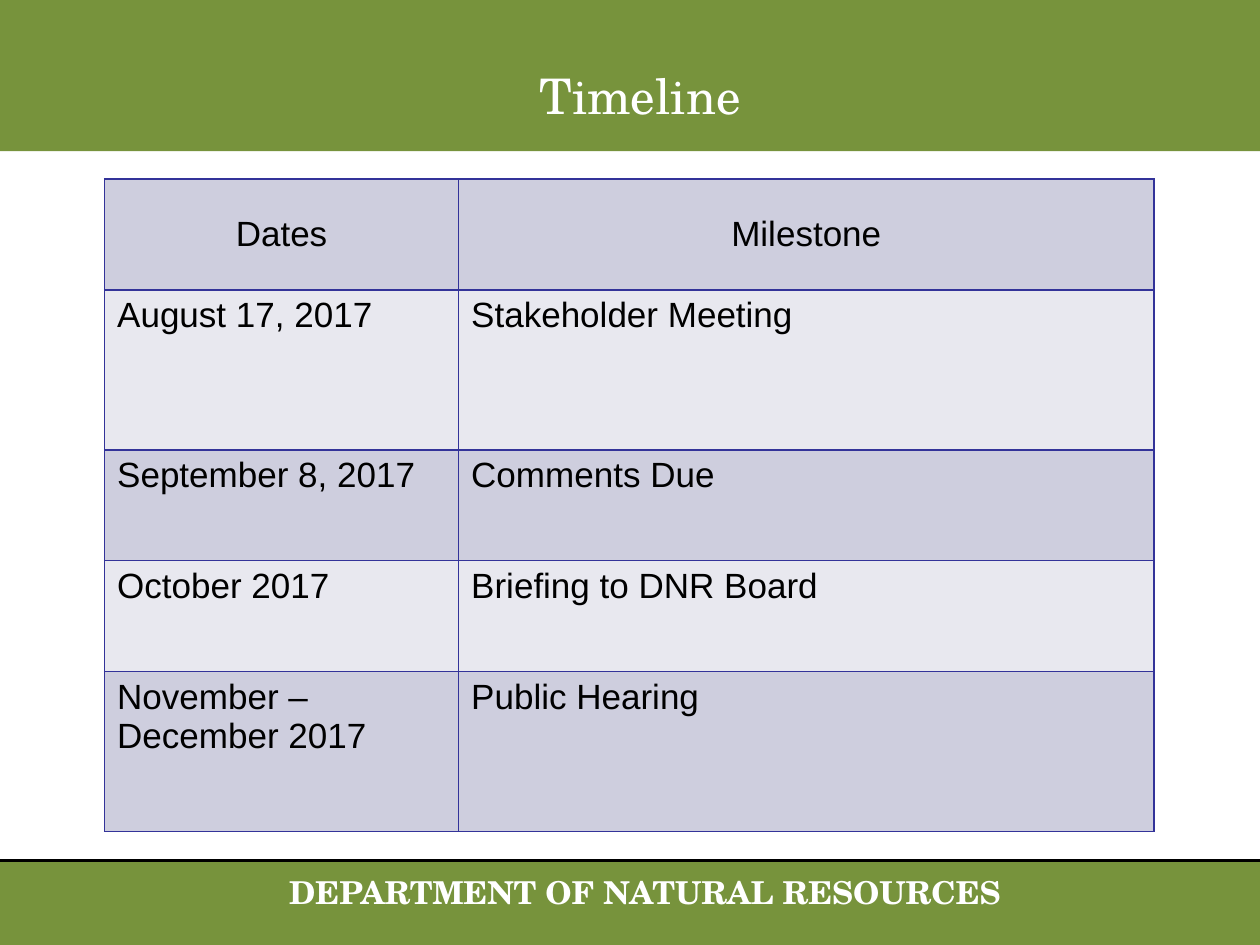
from dataclasses import dataclass

from lxml.etree import SubElement
from pptx import Presentation
from pptx.dml.color import RGBColor
from pptx.enum.shapes import MSO_CONNECTOR, MSO_SHAPE
from pptx.enum.text import MSO_ANCHOR as Anchor, PP_ALIGN as Align
from pptx.oxml.ns import qn
from pptx.slide import Slide
from pptx.table import _Cell as Cell
from pptx.util import Inches, Pt

GREEN, WHITE, BLACK = "77933C", "FFFFFF", "000000"
HEADING_FONT = "TeX Gyre Schola"
BORDER_COLOUR = "333399"
BAND_FILLS = ("CECEDE", "E8E8EF")
FOOTER_TOP = 6.83
COLUMN_WIDTHS = (2.81, 5.52)


@dataclass
class Band:
    top: float
    height: float


@dataclass
class Heading:
    text: str
    left: float
    top: float
    width: float
    height: float
    size: int
    bold: bool = False
    margin_top: float = 0.05
    line_spacing: float = 1.0


@dataclass
class Milestone:
    date: str
    event: str
    height: float = 0.88


BANDS = (Band(FOOTER_TOP, 0.67), Band(0, 1.2))
HEADINGS = (
    Heading("DEPARTMENT OF NATURAL RESOURCES", 1.58, 6.88, 7.08, 0.4, 18, bold=True),
    Heading("Timeline", 0.58, 0, 9, 1.17, 28, margin_top=0.45, line_spacing=0.9),
)
MILESTONES = (
    Milestone("Dates", "Milestone"),
    Milestone("August 17, 2017", "Stakeholder Meeting", 1.27),
    Milestone("September 8, 2017", "Comments Due"),
    Milestone("October 2017", "Briefing to DNR Board"),
    Milestone("November – December 2017", "Public Hearing", 1.27),
)


def colour(value: str) -> RGBColor:
    return RGBColor.from_string(value)


def draw_band(slide: Slide, band: Band) -> None:
    shape = slide.shapes.add_shape(
        MSO_SHAPE.RECTANGLE, 0, Inches(band.top), Inches(10), Inches(band.height)
    )
    shape.shadow.inherit = False
    shape.fill.solid()
    shape.fill.fore_color.rgb = colour(GREEN)
    shape.line.fill.background()


def draw_footer_rule(slide: Slide) -> None:
    rule = slide.shapes.add_connector(
        MSO_CONNECTOR.STRAIGHT, 0, Inches(FOOTER_TOP), Inches(10), Inches(FOOTER_TOP)
    )
    rule.line.color.rgb = colour(BLACK)
    rule.line.width = Pt(1.75)
    SubElement(rule._element.spPr, qn("a:effectLst"))


def draw_heading(slide: Slide, heading: Heading) -> None:
    box = slide.shapes.add_textbox(
        Inches(heading.left), Inches(heading.top),
        Inches(heading.width), Inches(heading.height),
    )
    text_frame = box.text_frame
    text_frame.word_wrap = True
    text_frame.vertical_anchor = Anchor.MIDDLE
    text_frame.margin_top = Inches(heading.margin_top)
    text_frame.text = heading.text
    paragraph = text_frame.paragraphs[0]
    paragraph.alignment = Align.CENTER
    paragraph.line_spacing = heading.line_spacing
    font = paragraph.runs[0].font
    font.name, font.size, font.bold = HEADING_FONT, Pt(heading.size), heading.bold
    font.color.rgb = colour(WHITE)


def add_borders(cell: Cell) -> None:
    properties = cell._tc.get_or_add_tcPr()
    for position, side in enumerate(("lnL", "lnR", "lnT", "lnB")):
        border = properties.makeelement(qn(f"a:{side}"), {"w": str(Pt(1))})
        fill = SubElement(border, qn("a:solidFill"))
        SubElement(fill, qn("a:srgbClr"), val=BORDER_COLOUR)
        properties.insert(position, border)


def fill_cell(cell: Cell, text: str, fill: str, is_header: bool) -> None:
    cell.fill.solid()
    cell.fill.fore_color.rgb = colour(fill)
    add_borders(cell)
    cell.vertical_anchor = Anchor.MIDDLE if is_header else Anchor.TOP
    cell.text_frame.text = text
    paragraph = cell.text_frame.paragraphs[0]
    paragraph.alignment = Align.CENTER if is_header else Align.LEFT
    font = paragraph.runs[0].font
    font.name, font.size, font.bold = "Arial", Pt(20), False
    font.color.rgb = colour(BLACK)


def draw_timeline(slide: Slide) -> None:
    table = slide.shapes.add_table(
        len(MILESTONES), len(COLUMN_WIDTHS), Inches(0.83), Inches(1.42),
        Inches(sum(COLUMN_WIDTHS)), Inches(sum(item.height for item in MILESTONES)),
    ).table
    for column, width in zip(table.columns, COLUMN_WIDTHS):
        column.width = Inches(width)
    for index, milestone in enumerate(MILESTONES):
        row = table.rows[index]
        row.height = Inches(milestone.height)
        for cell, text in zip(row.cells, (milestone.date, milestone.event)):
            fill_cell(cell, text, BAND_FILLS[index % 2], index == 0)


def main() -> None:
    presentation = Presentation()
    presentation.slide_width = Inches(10)
    presentation.slide_height = Inches(7.5)
    slide = presentation.slides.add_slide(presentation.slide_layouts[6])
    for band in BANDS:
        draw_band(slide, band)
    draw_footer_rule(slide)
    for heading in HEADINGS:
        draw_heading(slide, heading)
    draw_timeline(slide)
    presentation.save("out.pptx")


if __name__ == "__main__":
    main()
